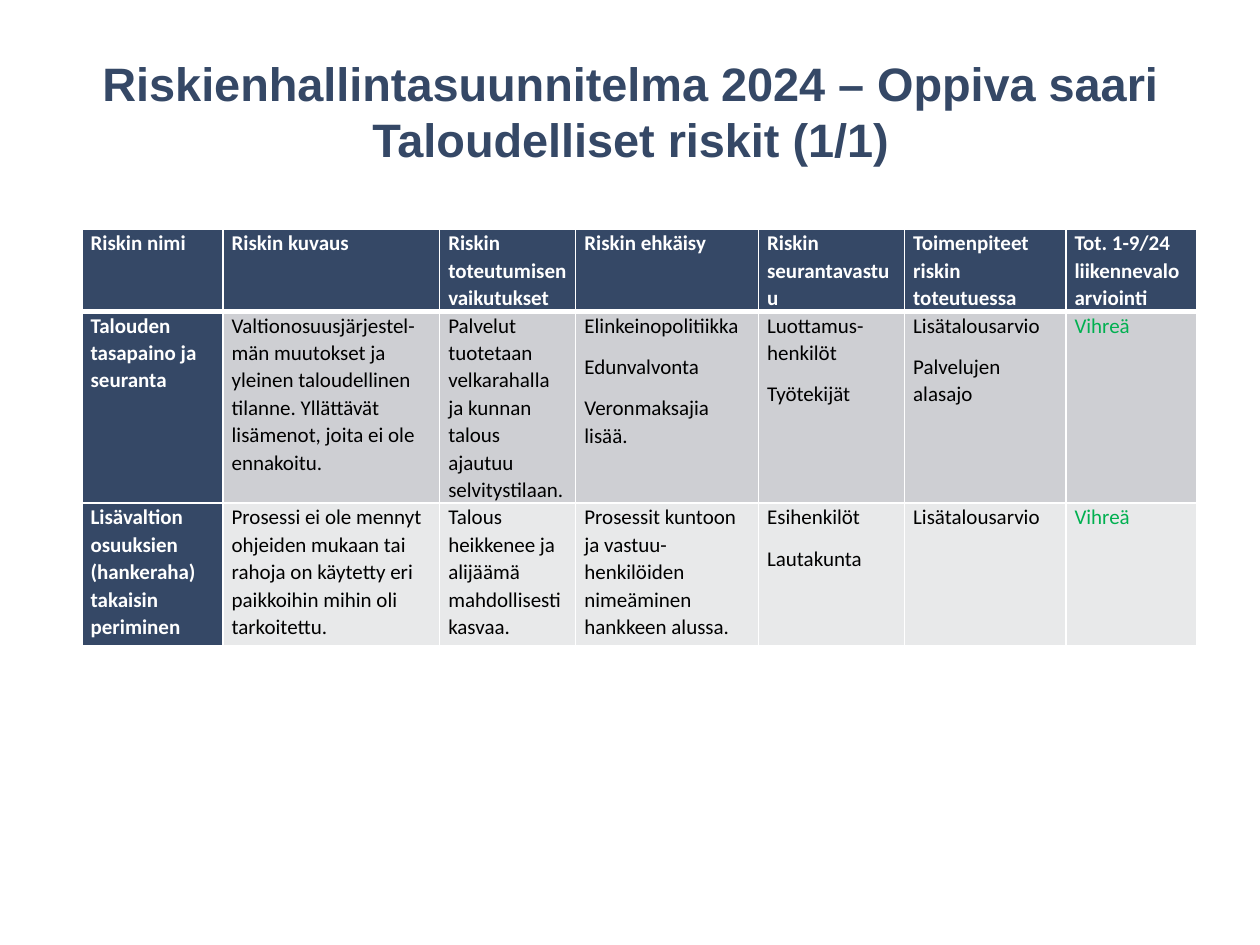
from lxml.etree import SubElement
from pptx import Presentation
from pptx.dml.color import RGBColor
from pptx.enum.text import PP_ALIGN
from pptx.oxml.ns import qn
from pptx.util import Pt

NAVY = "354866"
WHITE = "FFFFFF"
BLACK = "000000"
GREEN = "00B050"
BODY_FILLS = ["CECFD3", "E8E9EA"]
COLUMN_WIDTHS = [80.6, 123.8, 77.8, 104.4, 83.5, 92.2, 74.9]
ROW_HEIGHTS = [46.8, 94.3, 81.4]

TITLE = "Riskienhallintasuunnitelma 2024 – Oppiva saari\nTaloudelliset riskit (1/1)"
RISKS = [
    ["Riskin nimi", "Riskin kuvaus", "Riskin toteutumisen vaikutukset",
     "Riskin ehkäisy", "Riskin seurantavastuu",
     "Toimenpiteet riskin toteutuessa", "Tot. 1-9/24 liikennevaloarviointi"],
    ["Talouden tasapaino ja seuranta",
     "Valtionosuusjärjestel-män muutokset ja yleinen taloudellinen tilanne. "
     "Yllättävät lisämenot, joita ei ole ennakoitu.",
     "Palvelut tuotetaan velkarahalla ja kunnan talous ajautuu selvitystilaan.",
     "Elinkeinopolitiikka\nEdunvalvonta\nVeronmaksajia lisää.",
     "Luottamus-henkilöt\nTyötekijät",
     "Lisätalousarvio\nPalvelujen alasajo", "Vihreä"],
    ["Lisävaltion osuuksien (hankeraha) takaisin periminen",
     "Prosessi ei ole mennyt ohjeiden mukaan tai rahoja on käytetty eri "
     "paikkoihin mihin oli tarkoitettu.",
     "Talous heikkenee ja alijäämä mahdollisesti kasvaa.",
     "Prosessit kuntoon ja vastuu-henkilöiden nimeäminen hankkeen alussa.",
     "Esihenkilöt\nLautakunta", "Lisätalousarvio", "Vihreä"],
]


def rgb(color):
    return RGBColor.from_string(color)


def style_font(paragraph, name, size, color, bold):
    for run in paragraph.runs:
        run.font.name = name
        run.font.size = Pt(size)
        run.font.bold = bold
        run.font.color.rgb = rgb(color)


def add_title(slide):
    title = slide.shapes.add_textbox(Pt(11.5), Pt(0), Pt(698), Pt(90))
    frame = title.text_frame
    frame.word_wrap = True
    frame.margin_top = Pt(31.5)
    frame.margin_bottom = Pt(0)
    frame.text = TITLE
    for paragraph in frame.paragraphs:
        paragraph.alignment = PP_ALIGN.CENTER
        paragraph.line_spacing = Pt(32)
        style_font(paragraph, "Arial", 26.8, NAVY, True)


def add_borders(cell, widths):
    properties = cell._tc.get_or_add_tcPr()
    for position, (side, width) in enumerate(widths.items()):
        line = properties.makeelement(qn(f"a:{side}"), {"w": str(Pt(width))})
        fill = SubElement(line, qn("a:solidFill"))
        SubElement(fill, qn("a:srgbClr"), val=WHITE)
        properties.insert(position, line)


def fill_cell(cell, text, fill, color, bold):
    cell.margin_left = cell.margin_right = Pt(5)
    cell.margin_top = cell.margin_bottom = Pt(0)
    cell.fill.solid()
    cell.fill.fore_color.rgb = rgb(fill)
    cell.text_frame.text = text
    for paragraph in cell.text_frame.paragraphs:
        paragraph.line_spacing = 1.07
        paragraph.space_after = Pt(8)
        style_font(paragraph, "Calibri", 12, color, bold)


def add_risk_table(slide):
    table = slide.shapes.add_table(
        len(ROW_HEIGHTS), len(COLUMN_WIDTHS), Pt(46.8), Pt(131),
        Pt(sum(COLUMN_WIDTHS)), Pt(sum(ROW_HEIGHTS))).table
    for column, width in zip(table.columns, COLUMN_WIDTHS):
        column.width = Pt(width)
    for row, height in zip(table.rows, ROW_HEIGHTS):
        row.height = Pt(height)
    last = len(COLUMN_WIDTHS) - 1
    for r, risk in enumerate(RISKS):
        for c, text in enumerate(risk):
            heading = r == 0 or c == 0
            fill = NAVY if heading else BODY_FILLS[r - 1]
            color = WHITE if heading else GREEN if c == last else BLACK
            cell = table.cell(r, c)
            fill_cell(cell, text, fill, color, heading)
            add_borders(cell, {"lnL": 1, "lnR": 1,
                               "lnT": 3 if r == 1 else 1,
                               "lnB": 3 if r == 0 else 1})


def main():
    presentation = Presentation()
    presentation.slide_width = Pt(720)
    presentation.slide_height = Pt(540)
    slide = presentation.slides.add_slide(presentation.slide_layouts[6])
    add_risk_table(slide)
    add_title(slide)
    presentation.save("out.pptx")


if __name__ == "__main__":
    main()
